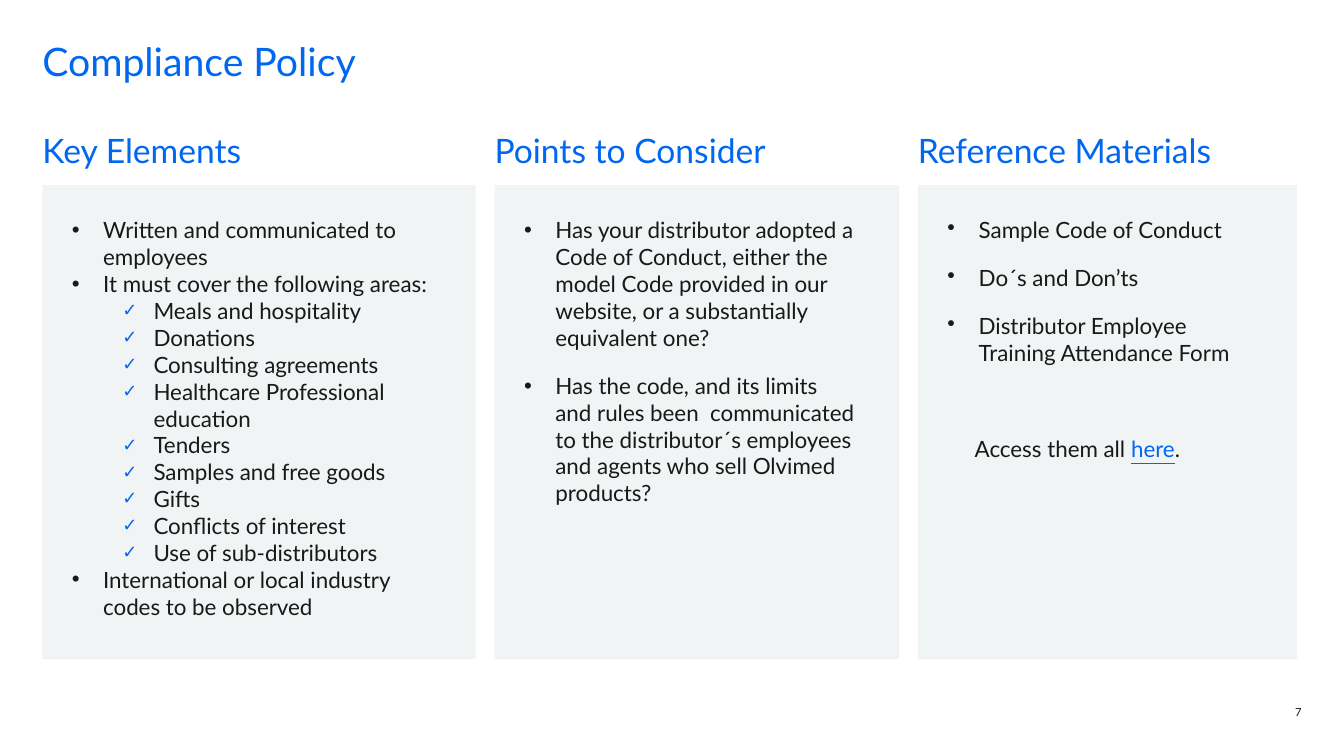
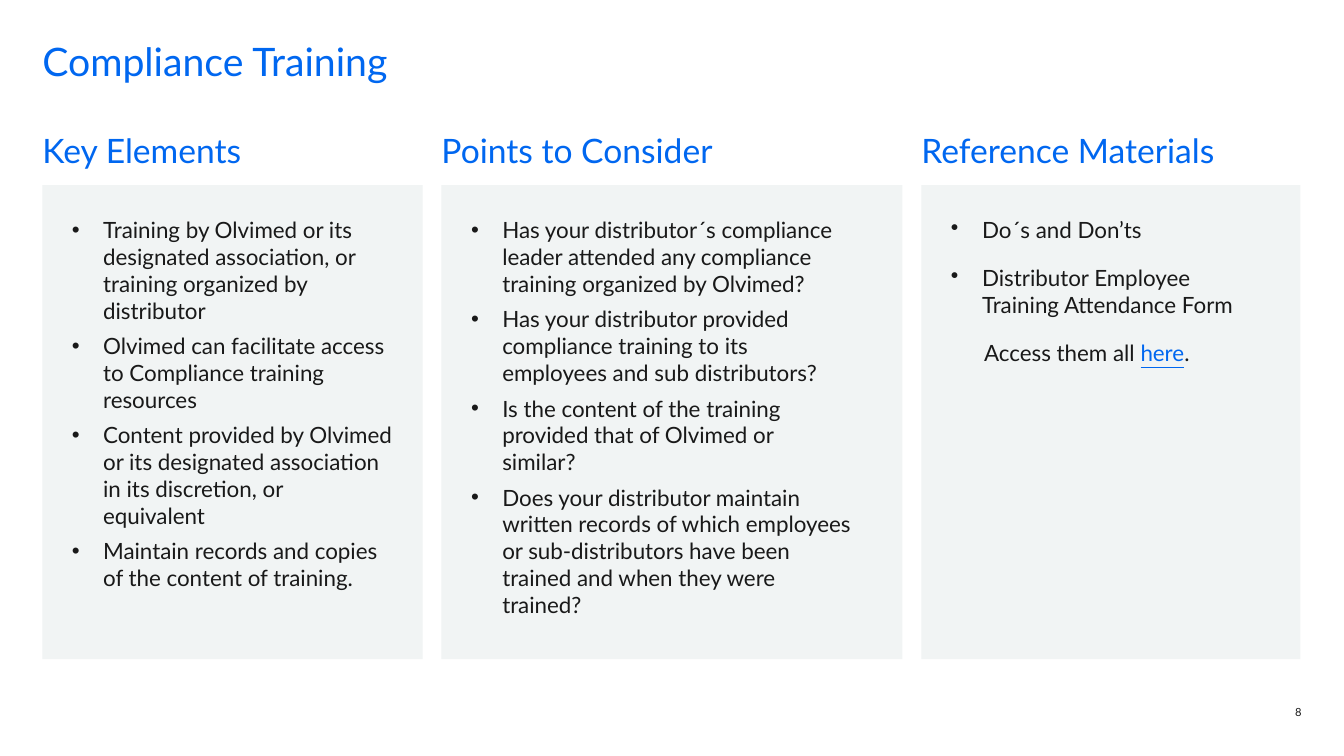
from dataclasses import dataclass, replace

import lxml.etree
import pptx
import pptx.dml.color
import pptx.enum.shapes
import pptx.enum.text
import pptx.oxml.ns
import pptx.util

SLIDE_WIDTH = pptx.util.Inches(13.33)
SLIDE_HEIGHT = pptx.util.Inches(7.5)
COLOURS = {"accent": "0067F0", "ink": "191919", "panel": "F1F4F4", "paper": "FFFFFF"}
FONT = "Lato"
COMPARISON_LAYOUT = 4
PLACEHOLDERS = ((1, 2), (3, 4))  # heading and list of the first two columns

# Shares of the slide's size, in percent
MARGIN, GUTTER, PADDING = 3.15, 1.4, 2.2
TITLE_TOP, TITLE_WIDTH, TITLE_HEIGHT = 5.6, 93.75, 5.6
HEADING_TOP, HEADING_WIDTH, HEADING_HEIGHT = 17.2, 29.2, 7.3
PANEL_TOP, PANEL_HEIGHT = 24.5, 62.7
LIST_TOP, LIST_HEIGHT = 28.65, 54.4


@dataclass(frozen=True)
class Box:
    """An area in percent of the slide's width and height."""
    left: float
    top: float
    width: float
    height: float


@dataclass(frozen=True)
class Style:
    """Sizes and spacing are in points, indents in inches."""
    size: float
    colour: str = "ink"
    indent: float = 0
    hanging: float = 0
    bullet: str = ""
    bullet_colour: str = ""
    level: int = 0
    space_before: float = 0
    space_after: float = 0
    line_spacing: float = 1.0
    alignment: pptx.enum.text.PP_ALIGN = pptx.enum.text.PP_ALIGN.LEFT


@dataclass(frozen=True)
class Entry:
    text: str
    style: Style
    link: str = ""
    ending: str = ""


@dataclass(frozen=True)
class Column:
    heading: str
    width: float
    list_width: float
    entries: list[Entry]


@dataclass(frozen=True)
class Page:
    title: str
    number: str
    columns: list[Column]


TITLE = Style(28, "accent", line_spacing=0.9)
HEADING = Style(24, "accent", space_after=15)
NUMBER = Style(8, alignment=pptx.enum.text.PP_ALIGN.RIGHT)
TIGHT = Style(16, indent=0.31, hanging=0.31, bullet="•")
CHECK = replace(TIGHT, indent=0.81, bullet="✓", bullet_colour="accent", level=1)
CLOSE = replace(TIGHT, space_after=6)
LOOSE = replace(TIGHT, space_after=15)
ACCESS = Style(16, indent=0.33, space_after=15)
ACCESS_APART = replace(ACCESS, indent=0.27, space_before=34.2)


def entries(style: Style, *texts: str) -> list[Entry]:
    return [Entry(text, style) for text in texts]


def access_entry(style: Style) -> Entry:
    return Entry("Access them all ", style, "here", ".")


PAGES = [
    Page("Compliance Policy", "7", [
        Column("Key Elements", 32.25, 28.15, [
            *entries(TIGHT,
                     "Written and communicated to employees",
                     "It must cover the following areas:"),
            *entries(CHECK,
                     "Meals and hospitality",
                     "Donations",
                     "Consulting agreements",
                     "Healthcare Professional education",
                     "Tenders",
                     "Samples and free goods",
                     "Gifts",
                     "Conflicts of interest",
                     "Use of sub-distributors"),
            *entries(TIGHT, "International or local industry codes to be observed"),
        ]),
        Column("Points to Consider", 30.1, 24.75, entries(
            LOOSE,
            "Has your distributor adopted a Code of Conduct, either the model Code "
            "provided in our website, or a substantially equivalent one?",
            "Has the code, and its limits and rules been  communicated to the "
            "distributor´s employees and agents who sell Olvimed products?",
        )),
        Column("Reference Materials", 28.2, 22.5, [
            *entries(LOOSE,
                     "Sample Code of Conduct",
                     "Do´s and Don’ts",
                     "Distributor Employee Training Attendance Form"),
            access_entry(ACCESS_APART),
        ]),
    ]),
    Page("Compliance Training", "8", [
        Column("Key Elements", 28.3, 23.85, entries(
            CLOSE,
            "Training by Olvimed or its designated association, or training "
            "organized by distributor",
            "Olvimed can facilitate access to Compliance training resources",
            "Content provided by Olvimed or its designated association in its "
            "discretion, or  equivalent",
            "Maintain records and copies of the content of training.",
        )),
        Column("Points to Consider", 34.3, 28.35, entries(
            CLOSE,
            "Has your distributor´s compliance leader attended any compliance "
            "training organized by Olvimed?",
            "Has your distributor provided compliance training to its employees "
            "and sub distributors?",
            "Is the content of the training provided that of Olvimed or similar?",
            "Does your distributor maintain written records of which employees or "
            "sub-distributors have been trained and when they were trained?",
        )),
        Column("Reference Materials", 28.2, 22.5, [
            *entries(LOOSE,
                     "Do´s and Don’ts",
                     "Distributor Employee Training Attendance Form"),
            access_entry(ACCESS),
        ]),
    ]),
]


def colour(name: str) -> pptx.dml.color.RGBColor:
    return pptx.dml.color.RGBColor.from_string(COLOURS[name])


def set_attributes(target, values: dict) -> None:
    for name, value in values.items():
        setattr(target, name, value)


def lengths(box: Box) -> dict:
    return {
        "left": round(SLIDE_WIDTH * box.left / 100),
        "top": round(SLIDE_HEIGHT * box.top / 100),
        "width": round(SLIDE_WIDTH * box.width / 100),
        "height": round(SLIDE_HEIGHT * box.height / 100),
    }


def set_bullet(paragraph, style: Style) -> None:
    """Write the indents and the bullet, or the lack of one."""
    properties = paragraph._p.get_or_add_pPr()
    properties.set("marL", str(pptx.util.Inches(style.indent)))
    properties.set("indent", str(-pptx.util.Inches(style.hanging)))

    def add(parent, tag: str, **attributes: str):
        return lxml.etree.SubElement(parent, pptx.oxml.ns.qn(tag), attributes)

    if style.bullet_colour:
        add(add(properties, "a:buClr"), "a:srgbClr", val=COLOURS[style.bullet_colour])
        add(properties, "a:buSzPct", val="80000")
    if style.bullet:
        add(properties, "a:buChar", char=style.bullet)
    else:
        add(properties, "a:buNone")


def add_run(paragraph, text: str, style: Style, linked: bool = False) -> None:
    run = paragraph.add_run()
    run.text = text
    set_attributes(run.font, {
        "name": FONT,
        "size": pptx.util.Pt(style.size),
        "bold": False,
        "underline": linked,
    })
    run.font.color.rgb = colour("accent" if linked else style.colour)


def write(shape, box: Box, content: list[Entry]) -> None:
    """Place a text shape and fill it with paragraphs."""
    set_attributes(shape, lengths(box))
    frame = shape.text_frame
    set_attributes(frame, {
        "margin_left": 0, "margin_top": 0, "margin_right": 0, "margin_bottom": 0,
        "word_wrap": True,
        "auto_size": pptx.enum.text.MSO_AUTO_SIZE.NONE,
        "vertical_anchor": pptx.enum.text.MSO_ANCHOR.TOP,
    })
    for index, entry in enumerate(content):
        paragraph = frame.add_paragraph() if index else frame.paragraphs[0]
        style = entry.style
        set_bullet(paragraph, style)
        set_attributes(paragraph, {
            "level": style.level,
            "alignment": style.alignment,
            "line_spacing": style.line_spacing,
            "space_before": pptx.util.Pt(style.space_before),
            "space_after": pptx.util.Pt(style.space_after),
        })
        add_run(paragraph, entry.text, style)
        if entry.link:
            add_run(paragraph, entry.link, style, linked=True)
            add_run(paragraph, entry.ending, style)


def add_text_box(slide):
    return slide.shapes.add_textbox(0, 0, 0, 0)


def add_panel(slide, box: Box) -> None:
    """Add a flat rectangle behind all text."""
    panel = slide.shapes.add_shape(
        pptx.enum.shapes.MSO_SHAPE.RECTANGLE, **lengths(box))
    panel.shadow.inherit = False
    panel.fill.solid()
    panel.fill.fore_color.rgb = colour("panel")
    panel.line.fill.background()
    slide.shapes._spTree.insert(2, panel._element)


def add_column(slide, column: Column, index: int, left: float) -> None:
    add_panel(slide, Box(left, PANEL_TOP, column.width, PANEL_HEIGHT))
    if index < len(PLACEHOLDERS):
        heading, body = (slide.placeholders[key] for key in PLACEHOLDERS[index])
    else:
        heading, body = add_text_box(slide), add_text_box(slide)
    write(heading, Box(left, HEADING_TOP, HEADING_WIDTH, HEADING_HEIGHT),
          entries(HEADING, column.heading))
    write(body, Box(left + PADDING, LIST_TOP, column.list_width, LIST_HEIGHT),
          column.entries)


def add_page(presentation, page: Page) -> None:
    slide = presentation.slides.add_slide(
        presentation.slide_layouts[COMPARISON_LAYOUT])
    slide.background.fill.solid()
    slide.background.fill.fore_color.rgb = colour("paper")
    write(slide.shapes.title, Box(MARGIN, TITLE_TOP, TITLE_WIDTH, TITLE_HEIGHT),
          entries(TITLE, page.title))
    left = MARGIN
    for index, column in enumerate(page.columns):
        add_column(slide, column, index, left)
        left += column.width + GUTTER
    write(add_text_box(slide), Box(94.9, 93.3, 1.95, 2.5),
          entries(NUMBER, page.number))


def main() -> None:
    presentation = pptx.Presentation()
    set_attributes(presentation, {
        "slide_width": SLIDE_WIDTH, "slide_height": SLIDE_HEIGHT})
    for page in PAGES:
        add_page(presentation, page)
    presentation.save("out.pptx")


if __name__ == "__main__":
    main()
